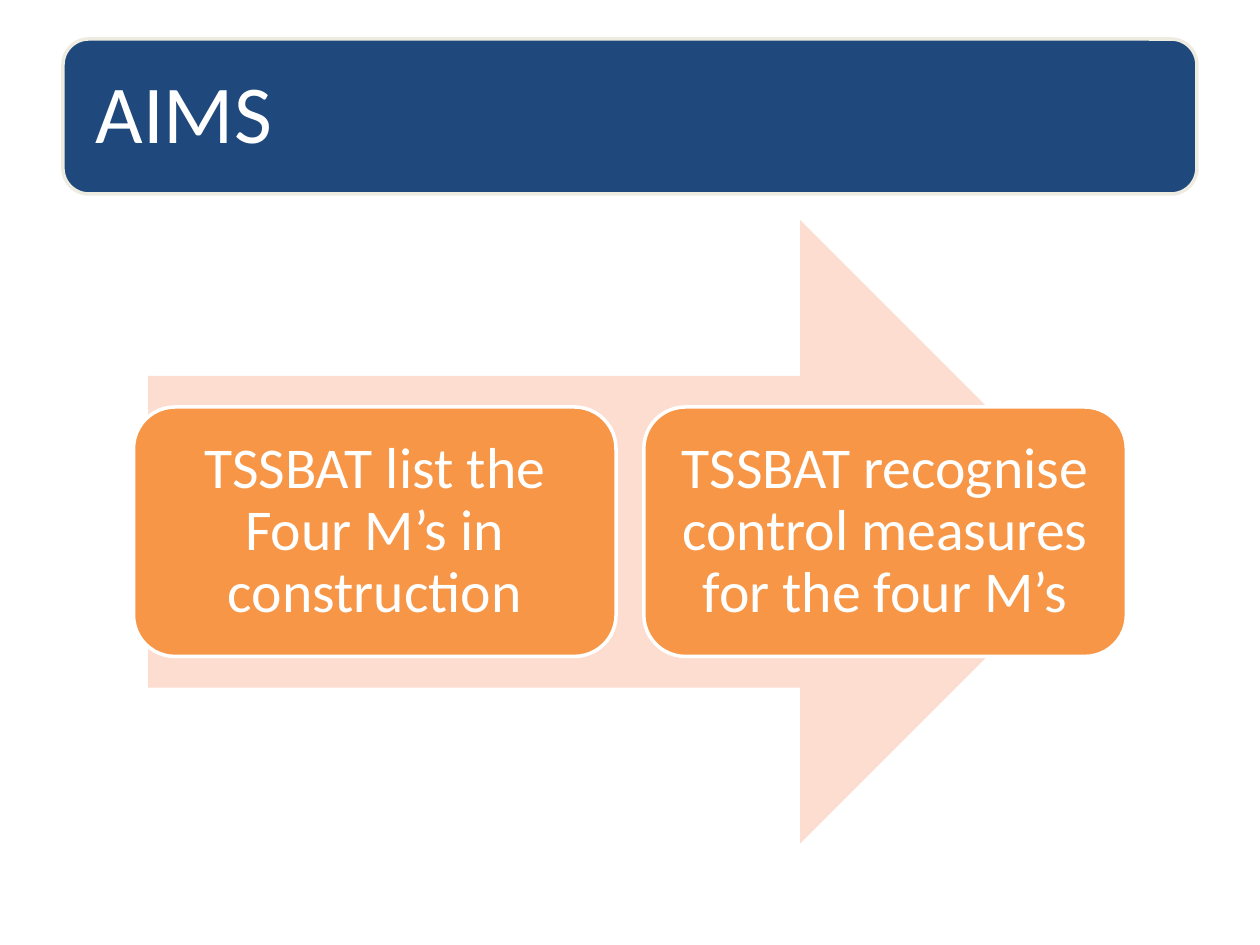
"""Build the AIMS slide: a title bar above an arrow carrying two aims."""
from pptx import Presentation, util as u
from pptx.dml.color import RGBColor
from pptx.enum import shapes, text

TITLE = "AIMS"
AIMS = [
    "TSSBAT list the Four M’s in construction",
    "TSSBAT recognise control measures for the four M’s",
]
HUES = {"navy": "1F497D", "cream": "EEECE1", "peach": "FCDDCF",
        "orange": "F79646", "white": "FFFFFF"}
ROUND = shapes.MSO_SHAPE.ROUNDED_RECTANGLE
ARROW = shapes.MSO_SHAPE.RIGHT_ARROW
WIDE, HIGH = 10, 7.5
CARD_W, CARD_H, GAP = 3.83, 1.98, 0.22
MID = 4.22


def hue(name):
    return RGBColor.from_string(HUES[name])


def add_box(slide, kind, box, fill, line=None):
    shape = slide.shapes.add_shape(kind, *map(u.Inches, box))
    shape.shadow.inherit = False
    shape.fill.solid()
    shape.fill.fore_color.rgb = hue(fill)
    if line:
        shape.line.color.rgb = hue(line)
        shape.line.width = u.Pt(2)
    else:
        shape.line.fill.background()
    return shape


def put_text(shape, words, size=33, align="CENTER", inset=0.14):
    frame = shape.text_frame
    frame.word_wrap = True
    frame.vertical_anchor = text.MSO_ANCHOR.MIDDLE
    frame.margin_left = frame.margin_right = u.Inches(inset)
    frame.margin_top = frame.margin_bottom = u.Inches(inset)
    para = frame.paragraphs[0]
    para.alignment = text.PP_ALIGN[align]
    para.line_spacing = 0.9
    run = para.add_run()
    run.text = words
    run.font.size = u.Pt(size)
    run.font.name = "Calibri"
    run.font.color.rgb = hue("white")


def main():
    deck = Presentation()
    deck.slide_width, deck.slide_height = u.Inches(WIDE), u.Inches(HIGH)
    slide = deck.slides.add_slide(deck.slide_layouts[6])

    bar = add_box(slide, ROUND, (0.5, 0.31, 9, 1.23), "navy", "cream")
    put_text(bar, TITLE, size=47, align="LEFT", inset=0.2)

    arrow_w, arrow_h = 7.65, 4.95
    add_box(slide, ARROW, ((WIDE - arrow_w) / 2, MID - arrow_h / 2,
                           arrow_w, arrow_h), "peach")

    row = len(AIMS) * (CARD_W + GAP) - GAP
    for i, aim in enumerate(AIMS):
        left = (WIDE - row) / 2 + i * (CARD_W + GAP)
        card = add_box(slide, ROUND, (left, MID - CARD_H / 2, CARD_W, CARD_H),
                       "orange", "white")
        put_text(card, aim)

    deck.save("out.pptx")


if __name__ == "__main__":
    main()
